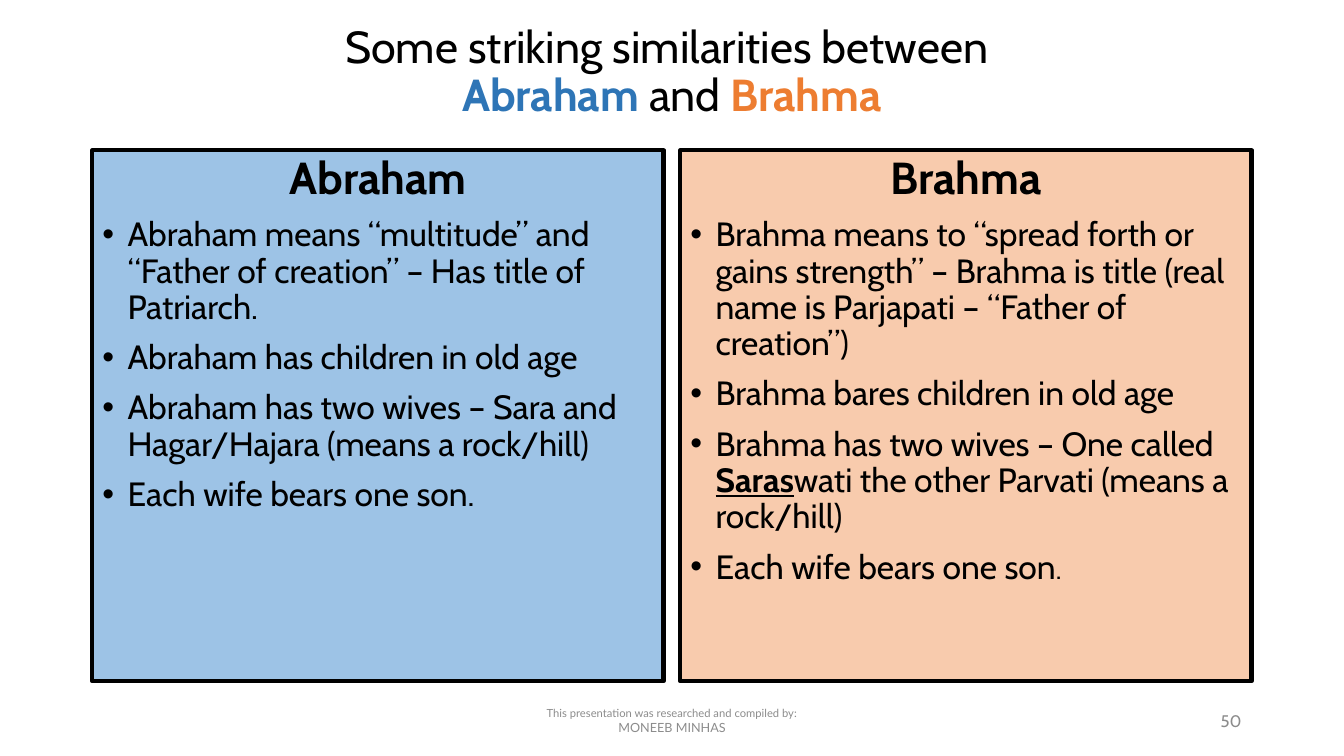
from dataclasses import dataclass

from lxml.etree import SubElement
from pptx import Presentation
from pptx.dml.color import RGBColor
from pptx.enum.shapes import MSO_SHAPE as Shape
from pptx.enum.text import MSO_ANCHOR as Anchor, MSO_AUTO_SIZE as AutoSize, PP_ALIGN as Align
from pptx.oxml.ns import qn
from pptx.util import Inches, Pt


@dataclass(frozen=True)
class Theme:
    font: str = "Cabin"
    credit_font: str = "Lato"
    ink: str = "000000"
    muted: str = "8C8C8C"
    blue: str = "2E75B6"
    orange: str = "ED7D31"
    pale_blue: str = "9DC3E6"
    pale_orange: str = "F8CBAD"
    heading: int = 32
    body: int = 24
    small_body: int = 20
    number: int = 12
    author: int = 9
    credit: int = 8
    border: int = 3
    line_spacing: float = 0.9
    space_before: int = 10
    bullet_indent: float = 0.25


@dataclass(frozen=True)
class Span:
    text: str
    size: int
    color: str = Theme.ink
    font: str = Theme.font
    bold: bool = False
    underline: bool = False
    line_break: bool = False


class SlideBuilder:
    """Places elements on a grid of 160 columns by 90 rows."""

    COLUMNS, ROWS = 160, 90

    def __init__(self, presentation, theme):
        self.theme = theme
        self.column = presentation.slide_width / self.COLUMNS
        self.row = presentation.slide_height / self.ROWS
        self.slide = presentation.slides.add_slide(presentation.slide_layouts[5])

    def area(self, left, top, width, height):
        return (round(left * self.column), round(top * self.row),
                round(width * self.column), round(height * self.row))

    def add_spans(self, paragraph, spans, align):
        paragraph.alignment = align
        for span in spans:
            run = paragraph.add_run()
            run.text = span.text
            run.font.name = span.font
            run.font.size = Pt(span.size)
            run.font.bold = span.bold
            run.font.underline = span.underline
            run.font.color.rgb = RGBColor.from_string(span.color)
            if span.line_break:
                paragraph.add_line_break()

    def prepare(self, shape, anchor):
        frame = shape.text_frame
        frame.word_wrap = True
        frame.auto_size = AutoSize.NONE
        frame.vertical_anchor = anchor
        return frame

    def title(self, area, spans):
        shape = self.slide.shapes.title
        shape.left, shape.top, shape.width, shape.height = self.area(*area)
        paragraph = self.prepare(shape, Anchor.MIDDLE).paragraphs[0]
        paragraph.line_spacing = self.theme.line_spacing
        self.add_spans(paragraph, spans, Align.CENTER)

    def text(self, area, spans, align):
        shape = self.slide.shapes.add_textbox(*self.area(*area))
        frame = self.prepare(shape, Anchor.MIDDLE)
        self.add_spans(frame.paragraphs[0], spans, align)

    def bullet(self, paragraph):
        properties = paragraph._p.get_or_add_pPr()
        indent = Inches(self.theme.bullet_indent)
        properties.set("marL", str(indent))
        properties.set("indent", str(-indent))
        SubElement(properties, qn("a:buFont")).set("typeface", "Arial")
        SubElement(properties, qn("a:buChar")).set("char", "•")

    def panel(self, area, fill, heading, points):
        theme = self.theme
        shape = self.slide.shapes.add_shape(Shape.RECTANGLE, *self.area(*area))
        shape.shadow.inherit = False
        shape.fill.solid()
        shape.fill.fore_color.rgb = RGBColor.from_string(fill)
        shape.line.color.rgb = RGBColor.from_string(theme.ink)
        shape.line.width = Pt(theme.border)
        frame = self.prepare(shape, Anchor.TOP)

        heading_span = Span(heading, theme.heading, bold=True)
        self.add_spans(frame.paragraphs[0], [heading_span], Align.CENTER)
        for spans in points:
            self.add_spans(frame.add_paragraph(), spans, Align.LEFT)
        for index, paragraph in enumerate(frame.paragraphs):
            paragraph.line_spacing = theme.line_spacing
            paragraph.space_before = Pt(theme.space_before)
            if index:
                self.bullet(paragraph)


def main():
    presentation = Presentation()
    presentation.slide_width = Inches(13.33)
    presentation.slide_height = Inches(7.5)
    theme = Theme()
    builder = SlideBuilder(presentation, theme)

    def body(text, **style):
        return Span(text, theme.body, **style)

    # Title
    builder.title((11, 2, 138, 13.4), [
        Span("Some striking similarities between ", theme.heading, line_break=True),
        Span("Abraham", theme.heading, theme.blue, bold=True),
        Span(" and ", theme.heading),
        Span("Brahma", theme.heading, theme.orange, bold=True),
    ])

    # Comparison panels
    panels = [
        ("Abraham", theme.pale_blue, [
            [body("Abraham means “multitude” and “Father of creation” – Has title of Patriarch.")],
            [body("Abraham has children in old age")],
            [body("Abraham has two wives – Sara and Hagar/Hajara (means a rock/hill)")],
            [body("Each wife bears one son.")],
        ]),
        ("Brahma", theme.pale_orange, [
            [body("Brahma means to “spread forth or gains strength” – Brahma is title "
                  "(real name is Parjapati – “Father of creation”)")],
            [body("Brahma bares children in old age")],
            [body("Brahma has two wives – One called "),
             body("Saras", bold=True, underline=True),
             body("wati the other Parvati (means a rock/hill)")],
            [body("Each wife bears one son"), Span(".", theme.small_body)],
        ]),
    ]
    panel_width, gutter = 68, 2
    for index, (heading, fill, points) in enumerate(panels):
        left = 11 + index * (panel_width + gutter)
        builder.panel((left, 17.9, panel_width, 63.2), fill, heading, points)

    # Footer
    footer_top, footer_height = 83.4, 4.8
    builder.text((53, footer_top, 54, footer_height), [
        Span("This presentation was researched and compiled by:", theme.credit,
             theme.muted, theme.credit_font, line_break=True),
        Span("MONEEB MINHAS", theme.author, theme.muted, theme.credit_font),
    ], Align.CENTER)
    builder.text((113, footer_top, 36, footer_height),
                 [Span("50", theme.number, theme.muted)], Align.RIGHT)

    presentation.save("out.pptx")


if __name__ == "__main__":
    main()
